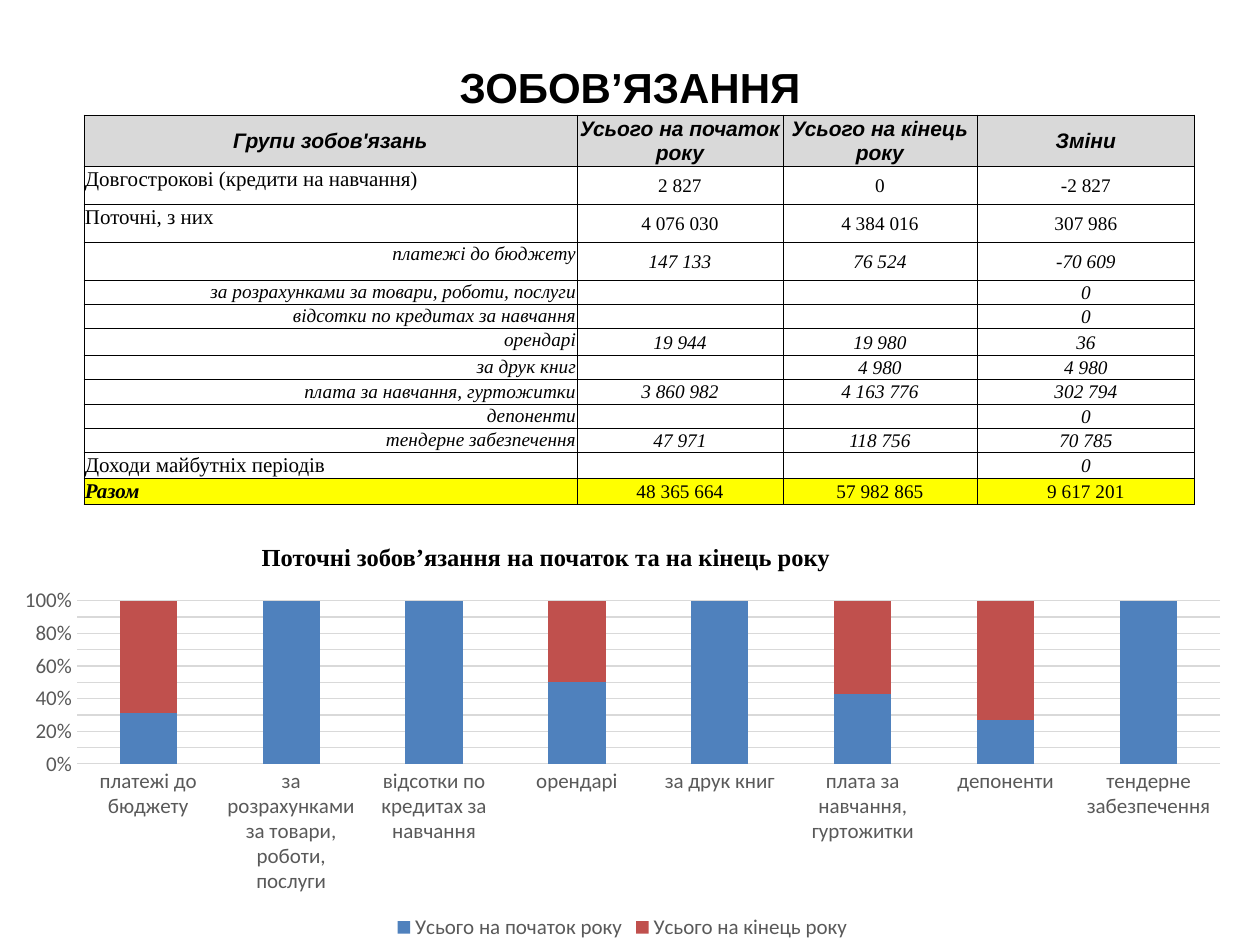
from dataclasses import dataclass

from lxml.etree import SubElement
from pptx import Presentation
from pptx.chart.data import CategoryChartData
from pptx.dml.color import RGBColor as Rgb
from pptx.enum.chart import XL_CHART_TYPE as Kind
from pptx.enum.chart import XL_LEGEND_POSITION as Legend
from pptx.enum.chart import XL_TICK_MARK as Tick
from pptx.enum.text import MSO_ANCHOR as Anchor
from pptx.enum.text import PP_ALIGN as Align
from pptx.oxml import parse_xml
from pptx.oxml.ns import nsdecls, qn
from pptx.util import Pt

SCALE = 914400 // 126  # EMU in one px


def px(n: int) -> int:
    return n * SCALE


@dataclass(frozen=True)
class Theme:
    black: str = "000000"
    gray: str = "595959"
    grid: str = "D9D9D9"
    gold: str = "FFFF00"
    bars: tuple = ("4F81BD", "C0504D")
    sans: str = "Arial"
    serif: str = "Times New Roman"
    plot: str = "Calibri"
    big: int = 24
    mid: int = 14
    main: int = 12
    small: int = 11


@dataclass(frozen=True)
class Look:
    size: int
    face: str = Theme.serif
    bold: bool = False
    slant: bool = False
    align: Align = Align.CENTER
    color: str = Theme.black


@dataclass(frozen=True)
class Row:
    high: int
    texts: tuple
    label: Look
    value: Look
    fill: str = ""
    anchor: Anchor = Anchor.TOP


T = Theme()
HEAD = Look(T.main, T.sans, True, True)
MAIN = Look(T.main, align=Align.LEFT)
SUB = Look(T.small, slant=True, align=Align.RIGHT)
TOTAL = Look(T.main, bold=True, slant=True, align=Align.LEFT)
PLAIN = Look(T.small)
ITALIC = Look(T.small, slant=True)
AXIS = Look(T.main, T.plot, color=T.gray)

# Table content
NAMES = ("Усього на початок року", "Усього на кінець року")
COLS = (493, 206, 194, 218)
ROWS = (
    Row(48, ("Групи зобов'язань", *NAMES, "Зміни"), HEAD, HEAD, T.grid,
        Anchor.MIDDLE),
    Row(38, ("Довгострокові (кредити на навчання)", "2 827", "0", "-2 827"),
        MAIN, PLAIN),
    Row(38, ("Поточні, з них", "4 076 030", "4 384 016", "307 986"),
        MAIN, PLAIN),
    Row(38, ("платежі до бюджету", "147 133", "76 524", "-70 609"),
        SUB, ITALIC),
    Row(23, ("за розрахунками за товари, роботи, послуги", "", "", "0"),
        SUB, ITALIC),
    Row(23, ("відсотки по кредитах за навчання", "", "", "0"), SUB, ITALIC),
    Row(27, ("орендарі", "19 944", "19 980", "36"), SUB, ITALIC),
    Row(24, ("за друк книг", "", "4 980", "4 980"), SUB, ITALIC),
    Row(23, ("плата за навчання, гуртожитки", "3 860 982", "4 163 776",
             "302 794"), SUB, ITALIC),
    Row(24, ("депоненти", "", "", "0"), SUB, ITALIC),
    Row(23, ("тендерне забезпечення", "47 971", "118 756", "70 785"),
        SUB, ITALIC),
    Row(25, ("Доходи майбутніх періодів", "", "", "0"), MAIN, ITALIC),
    Row(25, ("Разом", "48 365 664", "57 982 865", "9 617 201"),
        TOTAL, PLAIN, T.gold),
)
# Chart shares: each bar has a start part and the rest of 100
CATS = [row.texts[0] for row in ROWS if row.label is SUB]
START = (31, 100, 100, 50, 100, 43, 27, 100)
END = [100 - part or None for part in START]


def set_font(font, look: Look) -> None:
    font.size, font.name = Pt(look.size), look.face
    font.bold, font.italic = look.bold, look.slant
    font.color.rgb = Rgb.from_string(look.color)


def write(frame, text: str, look: Look) -> None:
    para = frame.paragraphs[0]
    para.alignment = look.align
    if text:
        para.text = text
    else:  # keeps an empty cell as low as its neighbours
        SubElement(para._p, qn("a:endParaRPr"), sz=str(look.size * 100))
    set_font(para.font, look)


def add_text(slide, box: tuple, text: str, look: Look) -> None:
    frame = slide.shapes.add_textbox(*map(px, box)).text_frame
    frame.word_wrap = True
    frame.vertical_anchor = Anchor.MIDDLE
    write(frame, text, look)


def add_edges(cell) -> None:
    props = cell._tc.get_or_add_tcPr()
    for spot, side in enumerate(("lnL", "lnR", "lnT", "lnB")):
        props.insert(spot, parse_xml(
            f'<a:{side} {nsdecls("a")} w="6350"><a:solidFill>'
            f'<a:srgbClr val="{T.black}"/></a:solidFill></a:{side}>'))


def fill_cell(cell, text: str, look: Look, row: Row, anchor: Anchor) -> None:
    cell.margin_left = cell.margin_right = cell.margin_top = px(1)
    cell.margin_bottom = 0
    cell.vertical_anchor = anchor
    write(cell.text_frame, text, look)
    if row.fill:
        cell.fill.solid()
        cell.fill.fore_color.rgb = Rgb.from_string(row.fill)
    else:
        cell.fill.background()
    add_edges(cell)


def add_grid(slide, left: int, top: int) -> None:
    size = sum(COLS), sum(row.high for row in ROWS)
    table = slide.shapes.add_table(
        len(ROWS), len(COLS), *map(px, (left, top, *size))).table
    table.first_row = table.horz_banding = False
    for col, wide in zip(table.columns, COLS):
        col.width = px(wide)
    for r, row in enumerate(ROWS):
        table.rows[r].height = px(row.high)
        for c, text in enumerate(row.texts):
            look = row.value if c else row.label
            anchor = Anchor.MIDDLE if c else row.anchor
            fill_cell(table.cell(r, c), text, look, row, anchor)


def add_bars(slide, box: tuple) -> None:
    data = CategoryChartData()
    data.categories = CATS
    for name, parts in zip(NAMES, (START, END)):
        data.add_series(name, parts)
    chart = slide.shapes.add_chart(
        Kind.COLUMN_STACKED_100, *map(px, box), data).chart
    chart.has_title = False
    set_font(chart.font, AXIS)
    # Bars
    plot = chart.plots[0]
    plot.gap_width, plot.overlap = 150, 100
    plot.vary_by_categories = False
    for part, color in zip(plot.series, T.bars):
        part.format.fill.solid()
        part.format.fill.fore_color.rgb = Rgb.from_string(color)
    # Axes
    for axis in (chart.category_axis, chart.value_axis):
        axis.major_tick_mark = axis.minor_tick_mark = Tick.NONE
        axis.format.line.fill.background()
        set_font(axis.tick_labels.font, AXIS)
    axis = chart.value_axis
    axis.minimum_scale, axis.maximum_scale, axis.major_unit = 0, 1, 0.1
    axis.tick_labels.number_format = "0%"
    axis.tick_labels.number_format_is_linked = False
    line = axis.major_gridlines.format.line
    line.width = Pt(0.75)
    line.color.rgb = Rgb.from_string(T.grid)
    # Legend
    chart.has_legend = True
    chart.legend.position = Legend.BOTTOM
    chart.legend.include_in_layout = False
    set_font(chart.legend.font, AXIS)


def main() -> None:
    deck = Presentation()
    deck.slide_width, deck.slide_height = px(1260), px(945)
    slide = deck.slides.add_slide(deck.slide_layouts[6])
    add_text(slide, (63, 38, 1134, 97), "ЗОБОВ’ЯЗАННЯ",
             Look(T.big, T.sans, True))
    add_grid(slide, 84, 115)
    add_text(slide, (184, 532, 724, 49),
             "Поточні зобов’язання на початок та на кінець року",
             Look(T.mid, bold=True))
    add_bars(slide, (0, 581, 1245, 364))
    deck.save("out.pptx")


if __name__ == "__main__":
    main()
